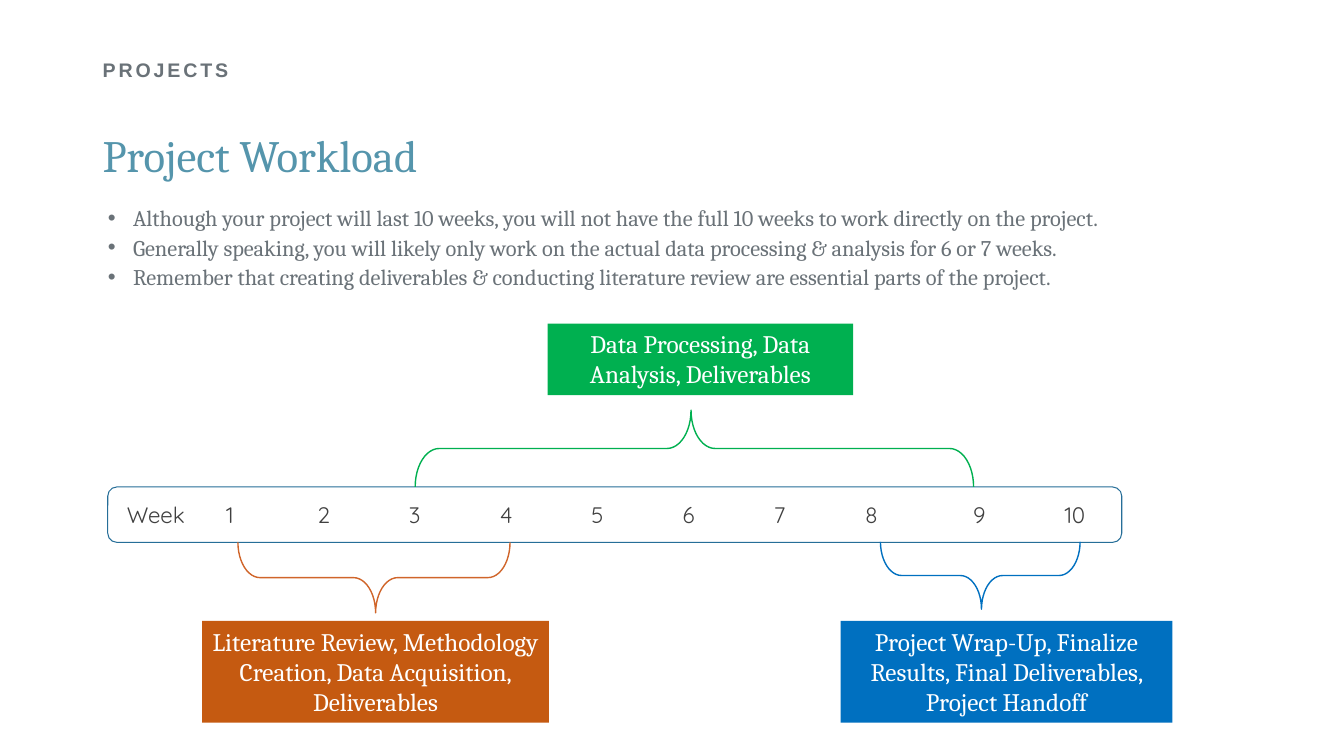
from dataclasses import dataclass

from pptx import Presentation
from pptx.dml.color import RGBColor
from pptx.enum import shapes, text
from pptx.oxml import xmlchemy
from pptx.util import Pt


@dataclass(frozen=True)
class Theme:
    """Colours, fonts and type sizes of the slide."""
    grey: str = "6A7278"
    teal: str = "5595AC"
    ink: str = "404040"
    white: str = "FFFFFF"
    bar: str = "266E98"
    orange: str = "C55A11"
    orange_line: str = "D0652A"
    green: str = "00B050"
    blue: str = "0070C0"
    label_font: str = "Arial"
    body_font: str = "Cambria"
    week_font: str = "Quicksand"
    label: int = 14
    body: int = 16
    phase: int = 18
    heading: int = 32


class SlideBuilder:
    """Draws styled elements on the current slide."""

    def __init__(self, slide, theme):
        """Keep the slide and its theme."""
        self.slide = slide
        self.theme = theme

    def place(self, shape, box):
        """Move and size a shape in points."""
        for name, value in zip(("left", "top", "width", "height"), box):
            setattr(shape, name, Pt(value))

    def set_text(self, shape, lines, font, size, color, bold=False,
                 anchor=text.MSO_ANCHOR.TOP, **formats):
        """Fill a shape with uniformly formatted paragraphs."""
        frame = shape.text_frame
        frame.text = "\n".join(lines)
        frame.word_wrap = True
        frame.auto_size = text.MSO_AUTO_SIZE.NONE
        frame.vertical_anchor = anchor
        font_values = {"name": font, "size": Pt(size), "bold": bold}
        for paragraph in frame.paragraphs:
            for name, value in formats.items():
                setattr(paragraph, name, value)
            for run in paragraph.runs:
                for name, value in font_values.items():
                    setattr(run.font, name, value)
                run.font.color.rgb = RGBColor.from_string(color)
        return frame.paragraphs

    def title(self, caption, box):
        """Place and format the title placeholder."""
        shape = self.slide.shapes.title
        self.place(shape, box)
        paragraphs = self.set_text(
            shape, [caption], self.theme.label_font, self.theme.label,
            self.theme.grey, bold=True, anchor=text.MSO_ANCHOR.MIDDLE,
            alignment=text.PP_ALIGN.LEFT, line_spacing=0.9)
        paragraphs[0].runs[0]._r.get_or_add_rPr().set("spc", "200")

    def text_box(self, lines, box, font, size, color, **formats):
        """Add a text box and return its paragraphs."""
        shape = self.slide.shapes.add_textbox(*map(Pt, box))
        return self.set_text(shape, lines, font, size, color, **formats)

    def bullets(self, lines, box):
        """Add a bulleted list."""
        for paragraph in self.text_box(
                lines, box, self.theme.body_font, self.theme.body,
                self.theme.grey, line_spacing=1.1):
            properties = paragraph._p.get_or_add_pPr()
            properties.set("marL", str(Pt(22.5)))
            properties.set("indent", str(Pt(-18)))
            self.child(properties, "a:buFont", typeface="Arial")
            self.child(properties, "a:buChar", char="•")

    def child(self, parent, tag, **attributes):
        """Append an XML element with attributes."""
        element = xmlchemy.OxmlElement(tag)
        for name, value in attributes.items():
            element.set(name, str(value))
        parent.append(element)
        return element

    def tabbed(self, cells, stops, box):
        """Add one line of text laid out on tab stops."""
        paragraph, = self.text_box(
            ["\t".join(cells)], box, self.theme.week_font,
            self.theme.body, self.theme.ink)
        tabs = self.child(paragraph._p.get_or_add_pPr(), "a:tabLst")
        for stop in stops:
            self.child(tabs, "a:tab", pos=Pt(stop), algn="l")

    def shape(self, kind, box, fill=None, line=None, weight=1.0):
        """Add a preset shape with an optional fill and outline."""
        shape = self.slide.shapes.add_shape(kind, *map(Pt, box))
        shape.shadow.inherit = False
        for part, color in ((shape.fill, fill), (shape.line.fill, line)):
            if color:
                part.solid()
                part.fore_color.rgb = RGBColor.from_string(color)
            else:
                part.background()
        if line:
            shape.line.width = Pt(weight)
        return shape

    def phase(self, caption, box, fill):
        """Add a filled phase label."""
        shape = self.shape(shapes.MSO_SHAPE.RECTANGLE, box, fill)
        self.set_text(shape, [caption], self.theme.body_font,
                      self.theme.phase, self.theme.white,
                      alignment=text.PP_ALIGN.CENTER)

    def brace(self, box, color, rotation):
        """Add a horizontal brace that spans the given box."""
        left, top, width, height = box
        shift = (width - height) / 2
        shape = self.shape(shapes.MSO_SHAPE.RIGHT_BRACE,
                           (left + shift, top - shift, height, width),
                           line=color)
        shape.rotation = rotation
        shape.adjustments[0] = 0.314
        shape.adjustments[1] = 0.494


def main():
    """Build and save the project workload slide."""
    presentation = Presentation()
    presentation.slide_width, presentation.slide_height = Pt(960), Pt(540)
    theme = Theme()
    builder = SlideBuilder(
        presentation.slides.add_slide(presentation.slide_layouts[5]), theme)

    builder.title("PROJECTS", (66.2, 28.8, 828, 44.6))
    builder.text_box(["Project Workload"], (66.2, 77.8, 843, 64.8),
                     theme.body_font, theme.heading, theme.teal,
                     anchor=text.MSO_ANCHOR.MIDDLE, space_before=Pt(10))
    builder.bullets([
        "Although your project will last 10 weeks, you will not have the "
        "full 10 weeks to work directly on the project.",
        "Generally speaking, you will likely only work on the actual data "
        "processing & analysis for 6 or 7 weeks.",
        "Remember that creating deliverables & conducting literature review "
        "are essential parts of the project.",
    ], (65.5, 140.4, 844, 71.3))

    builder.shape(shapes.MSO_SHAPE.ROUNDED_RECTANGLE,
                  (77, 347.8, 724.3, 39.6), line=theme.bar, weight=0.75)
    weeks = range(1, 11)
    first_stop, week_step, late_shift = 71, 65.2, 12
    stops = [first_stop + week_step * (week - 1) + late_shift * (week > 8)
             for week in weeks]
    builder.tabbed(["Week", *map(str, weeks)], stops,
                   (83.5, 354.2, 753.8, 26.6))

    phases = [
        ("Literature Review, Methodology Creation, Data Acquisition, "
         "Deliverables", (144.4, 443.5, 247.7, 72.7), theme.orange,
         (169.9, 387.4, 194.4, 50.4), theme.orange_line, 90),
        ("Data Processing, Data Analysis, Deliverables",
         (391.2, 231.1, 218.2, 51.1), theme.green,
         (296.6, 293, 398.9, 54.7), theme.green, 270),
        ("Project Wrap-Up, Finalize Results, Final Deliverables, "
         "Project Handoff", (600.5, 443.5, 236.9, 72.7), theme.blue,
         (628.9, 387, 142.6, 48.2), theme.blue, 90),
    ]
    for caption, label_box, fill, brace_box, line, rotation in phases:
        builder.phase(caption, label_box, fill)
        builder.brace(brace_box, line, rotation)

    presentation.save("out.pptx")


if __name__ == "__main__":
    main()
